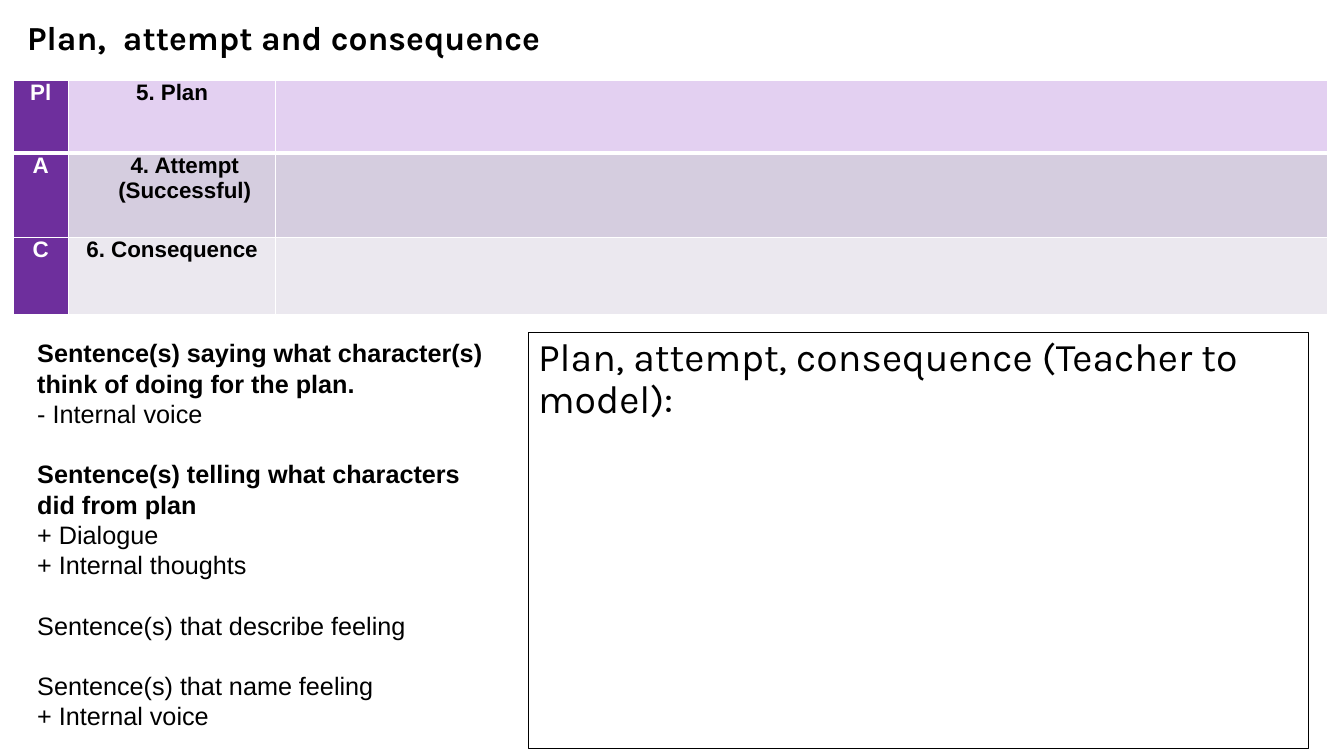
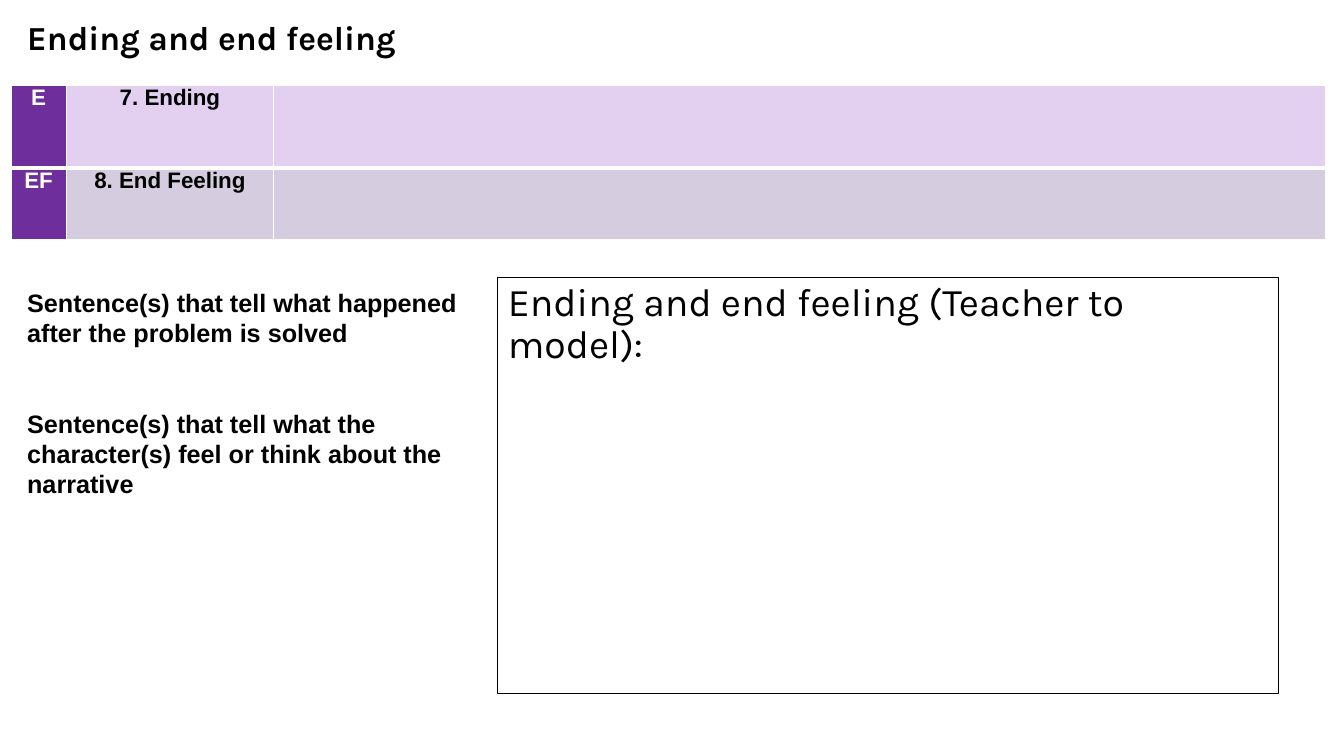
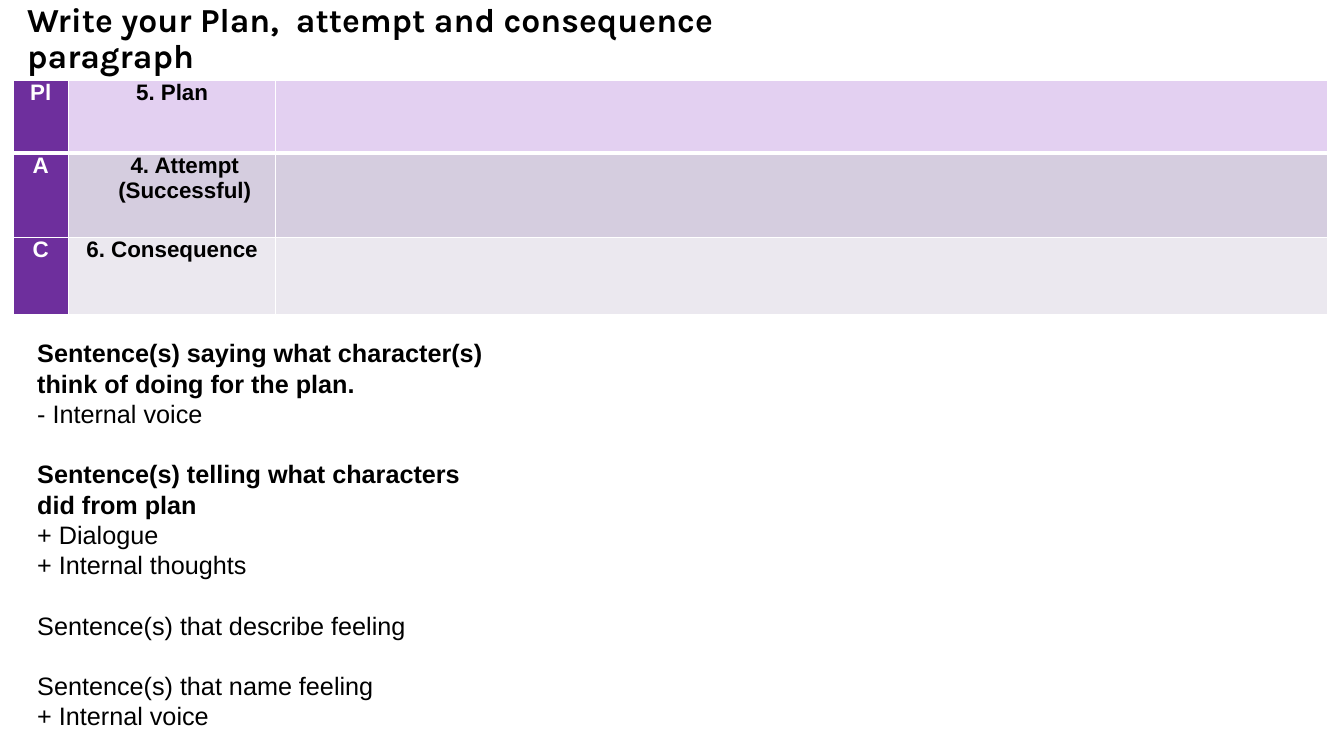
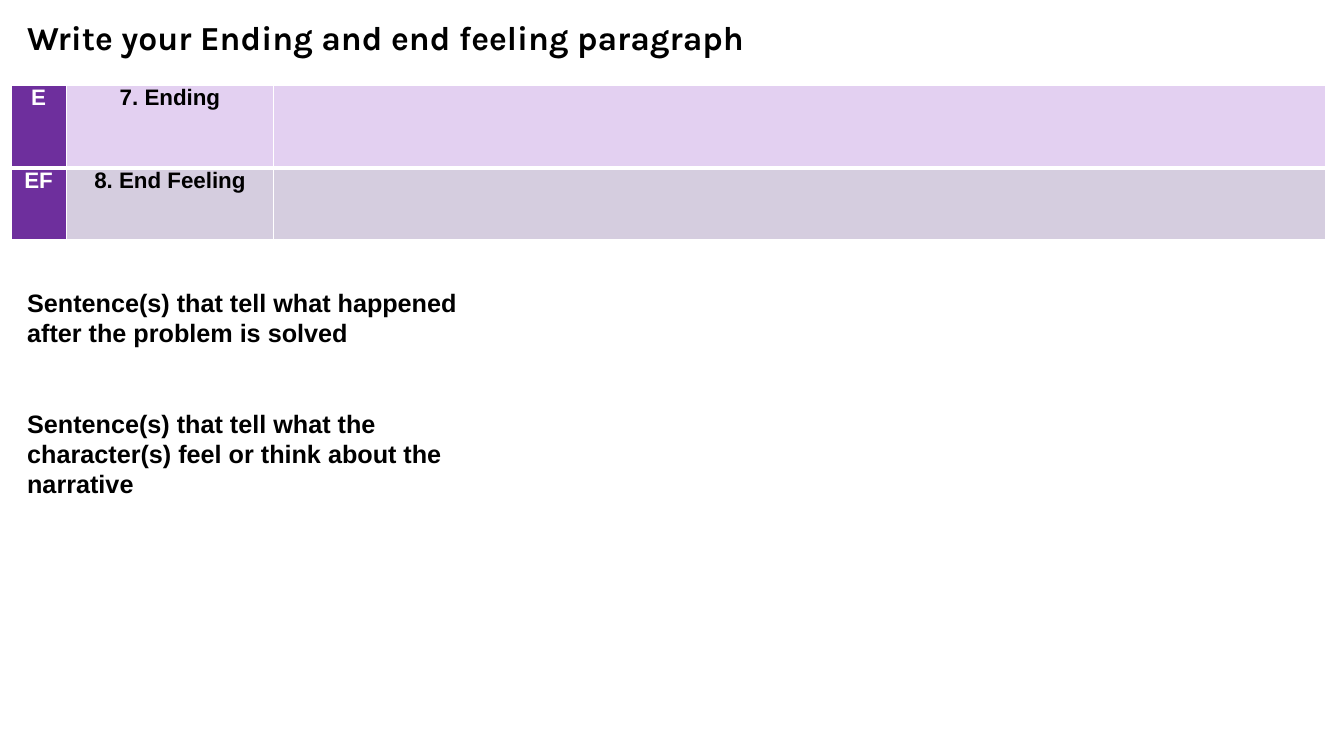
from dataclasses import dataclass

from lxml import etree
from pptx import Presentation
from pptx.dml.color import RGBColor
from pptx.enum.shapes import MSO_SHAPE
from pptx.enum.text import MSO_ANCHOR, MSO_AUTO_SIZE, PP_ALIGN
from pptx.oxml.ns import qn
from pptx.util import Pt

LEFT, CENTER = PP_ALIGN.LEFT, PP_ALIGN.CENTER
TOP, MIDDLE = MSO_ANCHOR.TOP, MSO_ANCHOR.MIDDLE
NO_FIT = MSO_AUTO_SIZE.NONE
RECTANGLE = MSO_SHAPE.RECTANGLE
TITLE_AND_CONTENT = 1


@dataclass(frozen=True)
class Theme:
    """Colours, fonts and sizes shared by every slide."""

    ink: str = "000000"
    paper: str = "FFFFFF"
    key: str = "6E2F9D"
    bands: tuple = ("E3D0F1", "D5CDDF", "EBE8EF")
    heading_font: str = "Karla"
    body_font: str = "Arial"
    title_size: float = 24
    model_size: float = 28
    prompt_size: float = 18
    cell_size: float = 16
    prompt_line: float = 21.6
    heading_spacing: float = 0.9
    rule: float = 1
    header_rule: float = 3
    outline: float = 0.75


THEME = Theme()
TITLE_BOX = (12.2, 0.7, 600, 55.4)
COLUMNS = (39.4, 148.3, 751)
MODEL_SIZE = (557.3, 297.4)

PLAN = {
    "table_at": (9.4, 57.6),
    "row_heights": (51.8, 60.5, 54.7),
    "stages": (("Pl", "5. Plan", 0), ("A", "4. Attempt (Successful)", 18),
               ("C", "6. Consequence", 0)),
    "prompts_box": (19.4, 237.6, 337.7, 302.4),
    "prompts": (
        ("Sentence(s) saying what character(s) think of doing for the plan.", True, 0),
        ("- Internal voice", False, 0),
        ("Sentence(s) telling what characters did from plan", True, 1),
        ("+ Dialogue", False, 0),
        ("+ Internal thoughts", False, 0),
        ("Sentence(s) that describe feeling", False, 1),
        ("Sentence(s) that name feeling", False, 1),
        ("+ Internal voice", False, 0),
    ),
}
ENDING = {
    "table_at": (7.9, 61.2),
    "row_heights": (59, 51.1),
    "stages": (("E", "7. Ending", 0), ("EF", "8. End Feeling", 0)),
    "prompts_box": (12.2, 201.6, 337.7, 203.8),
    "prompts": (
        ("Sentence(s) that tell what happened after the problem is solved", True, 0),
        ("Sentence(s) that tell what the character(s) feel or think about the narrative",
         True, 2),
    ),
}
LESSON = (
    ("Plan,  attempt and consequence", PLAN,
     ("Plan, attempt, consequence (Teacher to model):", (377.3, 237.6))),
    ("Ending and end feeling", ENDING,
     ("Ending and end feeling (Teacher to model):", (355.7, 198))),
    ("Write your Plan,  attempt and consequence paragraph", PLAN, None),
    ("Write your Ending and end feeling paragraph", ENDING, None),
)


def apply_format(target, **values):
    """Set each named attribute of the target."""
    for name, value in values.items():
        setattr(target, name, value)


def points(lengths):
    """Turn numbers into point lengths."""
    return [Pt(length) for length in lengths]


def place(placeholder, box):
    """Move a placeholder to a box given in points."""
    apply_format(placeholder, **dict(zip(("left", "top", "width", "height"), points(box))))


def write(paragraph, text, font, size, color, bold=False, **layout):
    """Fill a paragraph with text and format it."""
    paragraph.text = text
    apply_format(paragraph, **layout)
    apply_format(paragraph.font, name=font, size=Pt(size), bold=bold)
    paragraph.font.color.rgb = RGBColor.from_string(color)


def add_title(slide, text, box):
    """Write the slide title in its placeholder."""
    title = slide.shapes.title
    place(title, box)
    apply_format(title.text_frame, word_wrap=True, auto_size=NO_FIT, vertical_anchor=MIDDLE)
    write(title.text_frame.paragraphs[0], text, THEME.heading_font, THEME.title_size,
          THEME.ink, True, alignment=LEFT, line_spacing=THEME.heading_spacing)


def add_prompts(slide, prompts, box):
    """List the sentence prompts, grouped by whole-line gaps."""
    body = slide.placeholders[1]
    place(body, box)
    frame = body.text_frame
    apply_format(frame, word_wrap=True, auto_size=NO_FIT, vertical_anchor=TOP)
    for index, (prompt, bold, gap_lines) in enumerate(prompts):
        paragraph = frame.add_paragraph() if index else frame.paragraphs[0]
        properties = paragraph._p.get_or_add_pPr()
        for name in ("marL", "indent"):
            properties.set(name, "0")
        etree.SubElement(properties, qn("a:buNone"))
        write(paragraph, prompt, THEME.body_font, THEME.prompt_size, THEME.ink, bold,
              alignment=LEFT, line_spacing=Pt(THEME.prompt_line),
              space_before=Pt(gap_lines * THEME.prompt_line), space_after=Pt(0))


def rule_cell(cell, bottom_width):
    """Draw the four borders of a cell."""
    properties = cell._tc.get_or_add_tcPr()
    widths = {"L": THEME.rule, "R": THEME.rule, "T": THEME.rule, "B": bottom_width}
    for position, (side, width) in enumerate(widths.items()):
        border = etree.Element(qn(f"a:ln{side}"), w=str(Pt(width)))
        fill = etree.SubElement(border, qn("a:solidFill"))
        etree.SubElement(fill, qn("a:srgbClr"), val=THEME.paper)
        properties.insert(position, border)


def add_stage_table(slide, stages, row_heights, corner):
    """Add the table of story stages with its corner at the given point."""
    table = slide.shapes.add_table(
        len(stages), len(COLUMNS), *points((*corner, sum(COLUMNS), sum(row_heights)))).table
    apply_format(table, first_row=False, horz_banding=False)
    for column, width in zip(table.columns, COLUMNS):
        column.width = Pt(width)
    for index, (key, label, indent) in enumerate(stages):
        row, band = table.rows[index], THEME.bands[index]
        row.height = Pt(row_heights[index])
        contents = ((key, THEME.paper, THEME.key, 0), (label, THEME.ink, band, indent),
                    ("", THEME.ink, band, 0))
        for cell, (text, color, fill, margin) in zip(row.cells, contents):
            apply_format(cell, margin_left=Pt(5), margin_right=Pt(5),
                         margin_top=0, margin_bottom=0)
            cell.fill.solid()
            cell.fill.fore_color.rgb = RGBColor.from_string(fill)
            rule_cell(cell, THEME.rule if index else THEME.header_rule)
            paragraph = cell.text_frame.paragraphs[0]
            paragraph._p.get_or_add_pPr().set("marL", str(Pt(margin)))
            write(paragraph, text, THEME.body_font, THEME.cell_size, color, True,
                  alignment=CENTER)


def add_model_box(slide, text, corner):
    """Add the outlined area where the teacher models the writing."""
    model = slide.shapes.add_shape(RECTANGLE, *points((*corner, *MODEL_SIZE)))
    model.shadow.inherit = False
    model.fill.background()
    model.line.width = Pt(THEME.outline)
    model.line.color.rgb = RGBColor.from_string(THEME.ink)
    apply_format(model.text_frame, word_wrap=True, vertical_anchor=TOP)
    write(model.text_frame.paragraphs[0], text, THEME.heading_font, THEME.model_size,
          THEME.ink, alignment=LEFT, line_spacing=THEME.heading_spacing)


def add_writing_slide(deck, title, section, model):
    """Add one slide with its title, stages, prompts and optional model box."""
    slide = deck.slides.add_slide(deck.slide_layouts[TITLE_AND_CONTENT])
    add_title(slide, title, TITLE_BOX)
    add_prompts(slide, section["prompts"], section["prompts_box"])
    add_stage_table(slide, section["stages"], section["row_heights"], section["table_at"])
    if model:
        add_model_box(slide, *model)


def main():
    """Build and save the lesson."""
    deck = Presentation()
    apply_format(deck, slide_width=Pt(960), slide_height=Pt(540))
    for title, section, model in LESSON:
        add_writing_slide(deck, title, section, model)
    deck.save("out.pptx")


if __name__ == "__main__":
    main()
